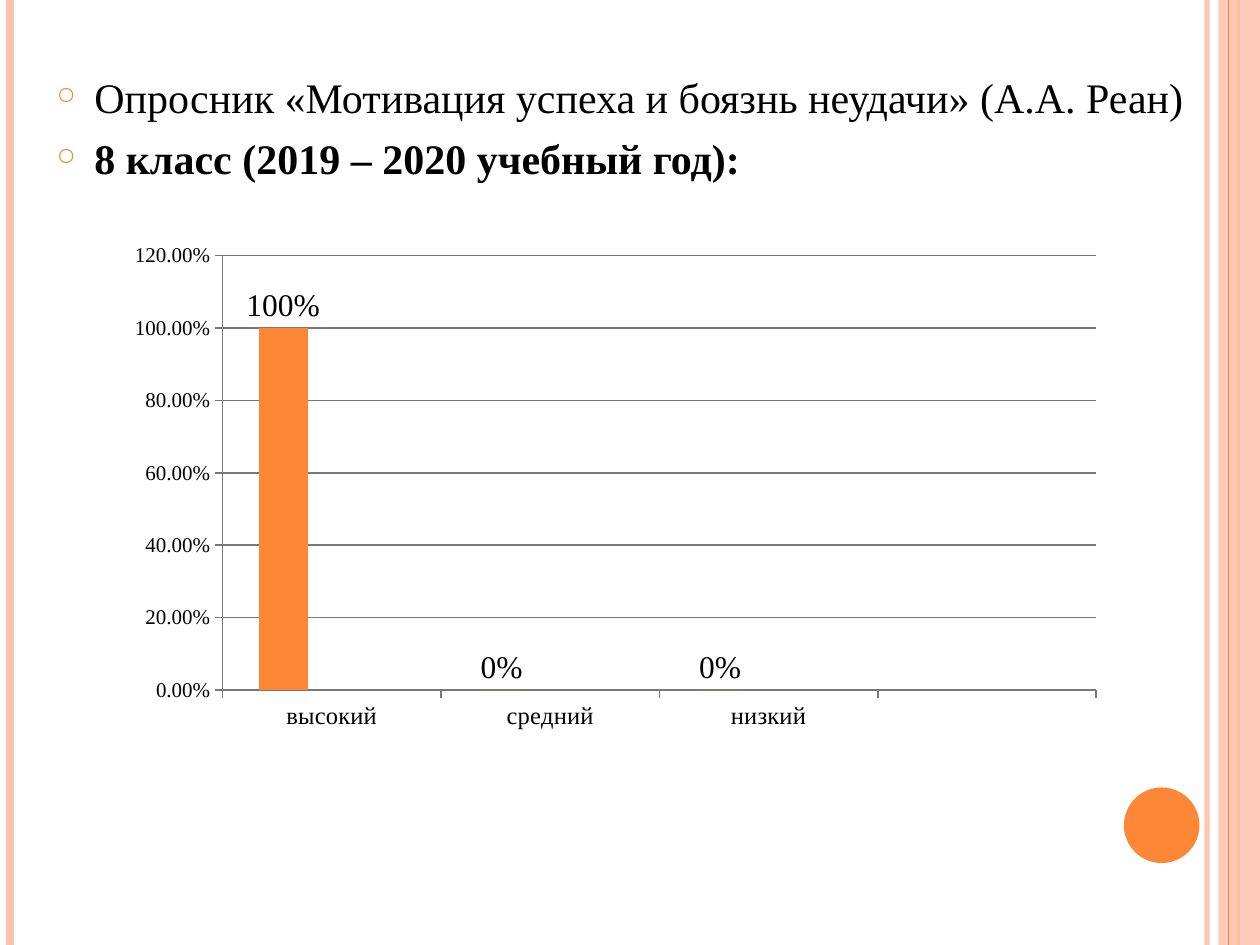
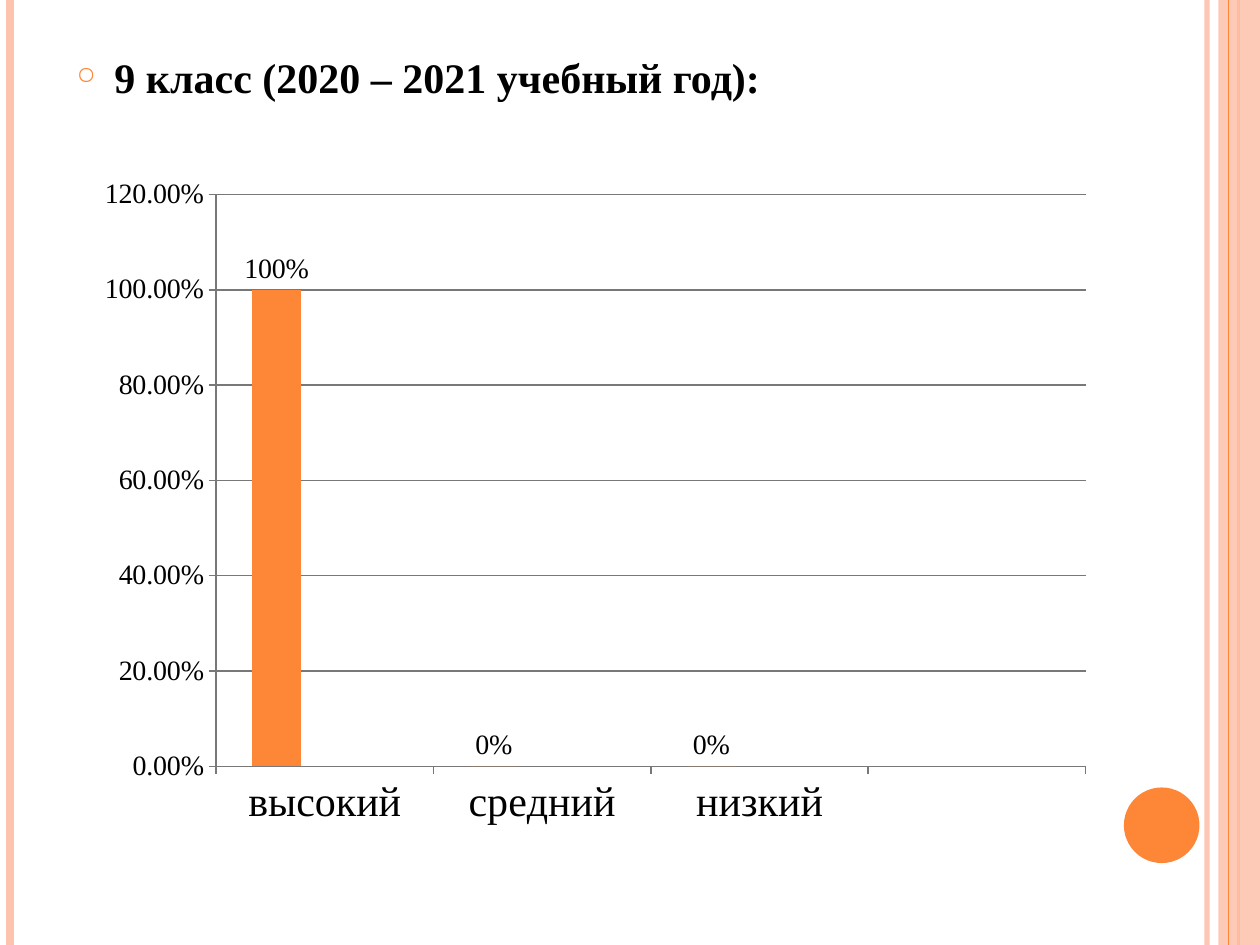
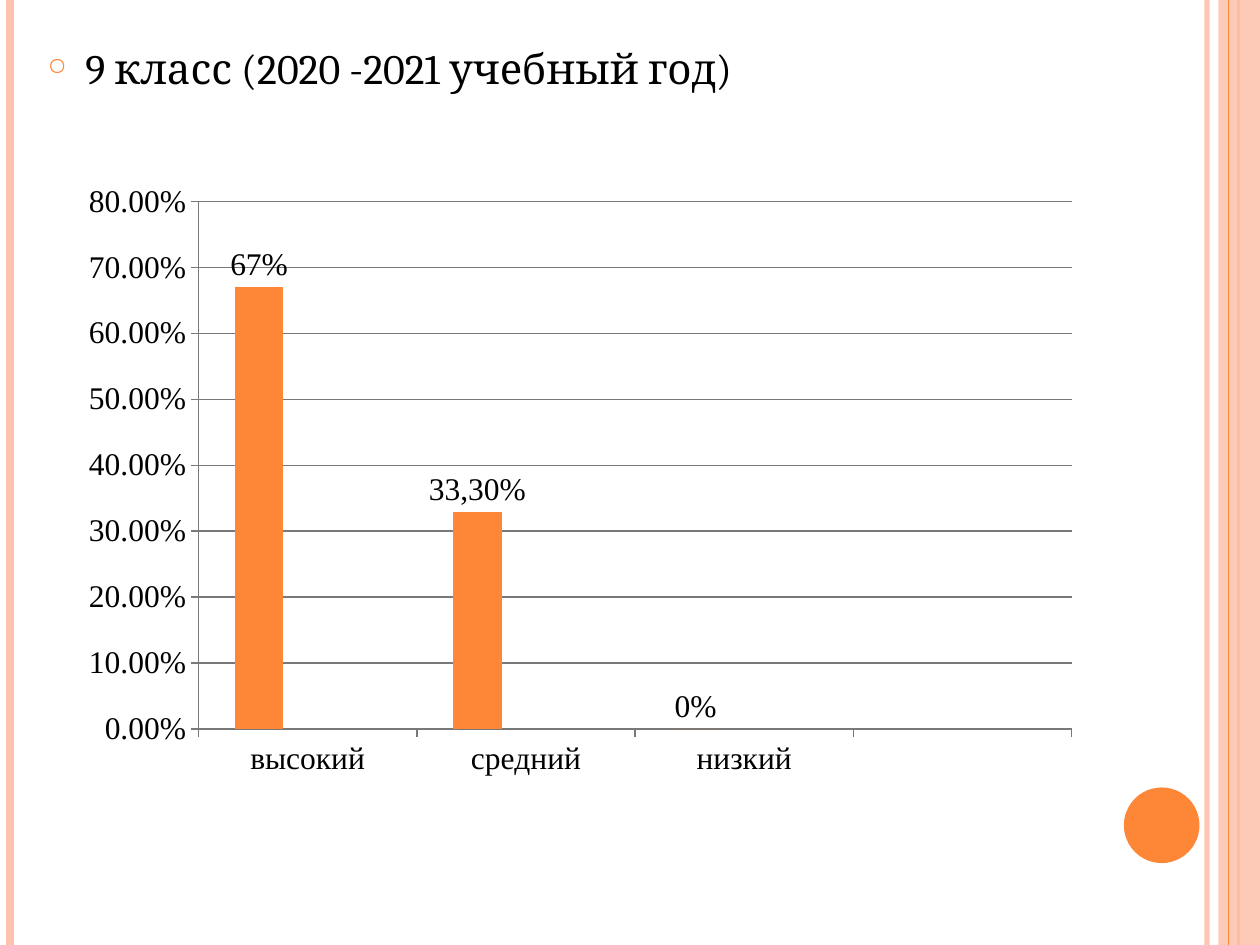
from lxml import etree
from pptx import Presentation
from pptx.chart.data import CategoryChartData
from pptx.dml.color import RGBColor
from pptx.enum.chart import XL_CHART_TYPE, XL_LABEL_POSITION, XL_TICK_MARK
from pptx.enum.shapes import MSO_CONNECTOR, MSO_SHAPE
from pptx.oxml import parse_xml
from pptx.oxml.ns import nsdecls, qn
from pptx.util import Inches, Pt

COLUMNS = XL_CHART_TYPE.COLUMN_CLUSTERED
OUTSIDE_END = XL_LABEL_POSITION.OUTSIDE_END
TICK_OUT, TICK_NONE = XL_TICK_MARK.OUTSIDE, XL_TICK_MARK.NONE
STRAIGHT = MSO_CONNECTOR.STRAIGHT
RECTANGLE, OVAL = MSO_SHAPE.RECTANGLE, MSO_SHAPE.OVAL

ORANGE = RGBColor(0xFE, 0x86, 0x37)
PEACH = RGBColor(0xFE, 0xC3, 0xAE)
BLUE = RGBColor(0x75, 0x98, 0xD9)
RED = RGBColor(0xB3, 0x2C, 0x16)
BLACK = RGBColor(0, 0, 0)
GRAY = RGBColor(0x78, 0x78, 0x78)

SERIF = "Times New Roman"
HEADING_FONT = "Cambria"
LEVELS = ["высокий", "средний", "низкий", ""]
SERIES_COLORS = [ORANGE, BLUE, RED]
SLIDE_HEIGHT = 7.5


def set_alpha(color_parent, percent):
    """Make the solid fill found below an element partly transparent."""
    color = color_parent.find(".//" + qn("a:srgbClr"))
    etree.SubElement(color, qn("a:alpha"), val=str(percent * 1000))


def add_stripe(slide, x, color, width, alpha=100):
    """Draw a vertical line over the full slide height."""
    stripe = slide.shapes.add_connector(
        STRAIGHT, Inches(x), 0, Inches(x), Inches(SLIDE_HEIGHT))
    stripe.line.color.rgb = color
    stripe.line.width = Pt(width)
    properties = stripe._element.spPr
    if alpha < 100:
        set_alpha(properties, alpha)
    etree.SubElement(properties, qn("a:effectLst"))


def add_plain_shape(slide, kind, box, color, alpha=100):
    shape = slide.shapes.add_shape(kind, *map(Inches, box))
    shape.shadow.inherit = False
    shape.fill.solid()
    shape.fill.fore_color.rgb = color
    shape.line.fill.background()
    if alpha < 100:
        set_alpha(shape._element.spPr, alpha)


def add_frame(slide):
    """Draw the side bands and the circle shared by all slides."""
    add_stripe(slide, 9.58, PEACH, 3, alpha=93)
    add_stripe(slide, 0.08, PEACH, 4.5)
    add_stripe(slide, 9.83, ORANGE, 1.5)
    add_plain_shape(slide, RECTANGLE, (9.67, 0, 0.33, SLIDE_HEIGHT), PEACH, alpha=87)
    add_stripe(slide, 9.75, ORANGE, 0.75)
    add_plain_shape(slide, OVAL, (8.92, 6.25, 0.6, 0.6), ORANGE)


def set_bullet(paragraph):
    properties = paragraph._p.get_or_add_pPr()
    properties.set("marL", str(Inches(0.3)))
    properties.set("indent", str(-Inches(0.3)))
    color = etree.SubElement(properties, qn("a:buClr"))
    etree.SubElement(color, qn("a:srgbClr"), val=str(ORANGE))
    etree.SubElement(properties, qn("a:buSzPct"), val="58000")
    etree.SubElement(properties, qn("a:buChar"), char="○")


def add_bullets(slide, box, lines, font_name=SERIF):
    """Add a bulleted text; lines are (text, bold) pairs."""
    frame = slide.shapes.add_textbox(*map(Inches, box)).text_frame
    frame.word_wrap = True
    for index, (text, bold) in enumerate(lines):
        paragraph = frame.add_paragraph() if index else frame.paragraphs[0]
        paragraph.space_before = Pt(6)
        set_bullet(paragraph)
        run = paragraph.add_run()
        run.text = text
        style_font(run.font, 24, font_name)
        run.font.bold = bold


def style_font(font, size, name=SERIF):
    font.size = Pt(size)
    font.name = name
    font.color.rgb = BLACK


def style_chart_line(line):
    line.color.rgb = GRAY
    line.width = Pt(0.9)


def style_axis(axis, size):
    axis.major_tick_mark = TICK_OUT
    axis.minor_tick_mark = TICK_NONE
    style_chart_line(axis.format.line)
    style_font(axis.tick_labels.font, size)


def set_plot_layout(chart, plot_box):
    """Place the inner plot area, as fractions of the chart."""
    plot_area = chart._chartSpace.chart.plotArea
    for layout in plot_area.findall(qn("c:layout")):
        plot_area.remove(layout)
    sizes = "".join(f'<c:{tag} val="{value}"/>' for tag, value in zip("xywh", plot_box))
    plot_area.insert(0, parse_xml(
        f'<c:layout {nsdecls("c")}><c:manualLayout><c:layoutTarget val="inner"/>'
        f'<c:xMode val="edge"/><c:yMode val="edge"/>{sizes}'
        '</c:manualLayout></c:layout>'))


def add_level_chart(slide, box, values, plot_box, top, step, sizes, point_labels=None):
    """Add a column chart; sizes are for categories, values and labels."""
    category_size, value_size, label_size = sizes
    data = CategoryChartData(number_format="0.00%")
    data.categories = LEVELS
    data.add_series("Series 1", [*values, None])
    for name in ("Series 2", "Series 3"):
        data.add_series(name, [None] * len(LEVELS))
    chart = slide.shapes.add_chart(COLUMNS, *map(Inches, box), data).chart
    chart.has_legend = False
    chart.has_title = False
    style_font(chart.font, value_size)
    set_plot_layout(chart, plot_box)

    style_axis(chart.category_axis, category_size)
    value_axis = chart.value_axis
    style_axis(value_axis, value_size)
    value_axis.minimum_scale = 0
    value_axis.maximum_scale = top
    value_axis.major_unit = step
    value_axis.tick_labels.number_format = "0.00%"
    value_axis.tick_labels.number_format_is_linked = False
    style_chart_line(value_axis.major_gridlines.format.line)

    plot = chart.plots[0]
    plot.gap_width = 150
    plot.overlap = 0
    plot.vary_by_categories = False
    for series, color in zip(plot.series, SERIES_COLORS):
        series.format.fill.solid()
        series.format.fill.fore_color.rgb = color

    level_series = plot.series[0]
    labels = level_series.data_labels
    labels.show_value = True
    labels.number_format = "0%"
    labels.number_format_is_linked = False
    labels.position = OUTSIDE_END
    style_font(labels.font, label_size)
    for index, text in (point_labels or {}).items():
        label = level_series.points[index].data_label
        run = label.text_frame.paragraphs[0].add_run()
        run.text = text
        style_font(run.font, label_size)
        label.position = OUTSIDE_END


def add_framed_slide(presentation):
    slide = presentation.slides.add_slide(presentation.slide_layouts[6])
    add_frame(slide)
    return slide


def main():
    presentation = Presentation()
    presentation.slide_width = Inches(10)
    presentation.slide_height = Inches(SLIDE_HEIGHT)

    slide = add_framed_slide(presentation)
    add_bullets(slide, (0.35, 0.52, 9.21, 6.61), [
        ("Опросник «Мотивация успеха и боязнь неудачи» (А.А. Реан)", False),
        ("8 класс (2019 – 2020 учебный год):", True),
    ])
    add_level_chart(slide, (0.89, 1.87, 7.97, 4.01), [1, 0, 0],
                    (0.11, 0.04, 0.87, 0.86), 1.2, 0.2, (14, 12, 18))

    slide = add_framed_slide(presentation)
    add_bullets(slide, (0.51, 0.36, 8.17, 5.33),
                [("9 класс (2020 – 2021 учебный год):", True)])
    add_level_chart(slide, (0.66, 1.33, 8.12, 5.34), [1, 0, 0],
                    (0.13, 0.04, 0.85, 0.85), 1.2, 0.2, (24, 16, 16))

    slide = add_framed_slide(presentation)
    add_bullets(slide, (0.28, 0.29, 8.17, 5.33),
                [("9 класс (2020 -2021 учебный год)", False)], HEADING_FONT)
    add_level_chart(slide, (0.49, 1.38, 8.35, 5.51), [0.67, 0.33, 0],
                    (0.13, 0.04, 0.83, 0.76), 0.8, 0.1, (18, 18, 18), {1: "33,30%"})

    presentation.save("out.pptx")


if __name__ == "__main__":
    main()
